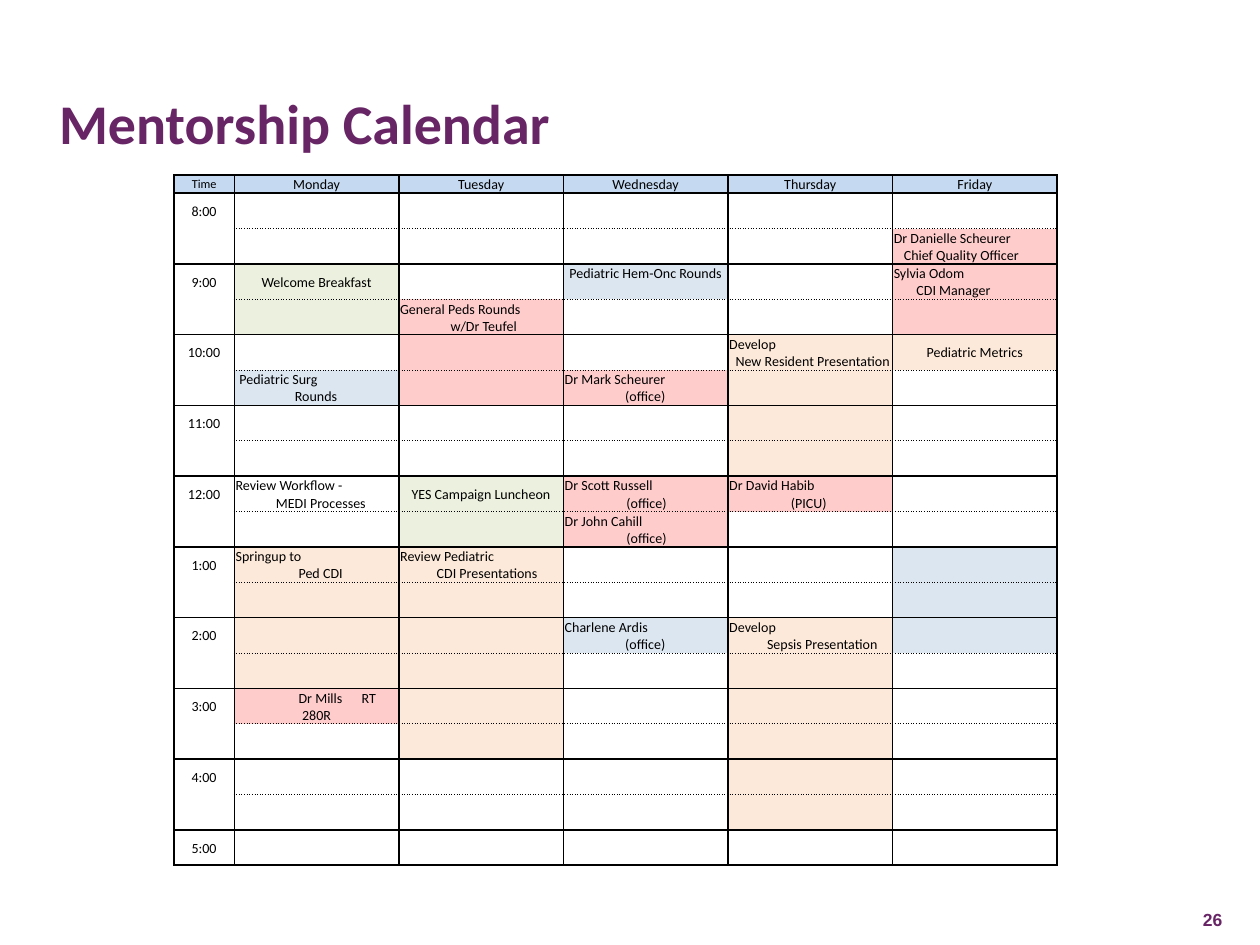
from lxml import etree
from pptx import Presentation, util as u
from pptx.dml.color import RGBColor
from pptx.enum import text as t
from pptx.oxml.ns import qn

INK = {"plum": "682566", "black": "000000", "head": "C5D9F1",
       "g": "EBF1DE", "p": "FFCCCC", "b": "DCE6F1", "o": "FDE9D9"}
LEFT, MID, RIGHT = t.PP_ALIGN.LEFT, t.PP_ALIGN.CENTER, t.PP_ALIGN.RIGHT


def style(par, size, face, ink, bold=False, align=LEFT):
    par.alignment = align
    font = par.font
    font.size, font.name, font.bold = u.Pt(size), face, bold
    font.color.rgb = RGBColor.from_string(INK[ink])


def edge(cell, side, kind):
    """Draw one cell border: solid, dot or none."""
    width = {"solid": u.Pt(1), "dot": u.Pt(0.5), "none": 0}[kind]
    line = etree.SubElement(cell._tc.get_or_add_tcPr(), qn("a:ln" + side), w=str(width))
    if kind == "none":
        etree.SubElement(line, qn("a:noFill"))
        return
    fill = etree.SubElement(line, qn("a:solidFill"))
    etree.SubElement(fill, qn("a:srgbClr"), val=INK["black"])
    etree.SubElement(line, qn("a:prstDash"), val="solid" if kind == "solid" else "sysDot")


prs = Presentation()
prs.slide_width, prs.slide_height = u.Inches(10), u.Inches(7.5)
slide = prs.slides.add_slide(prs.slide_layouts[6])

# Title and page number
for words, box, size, face, align in [
        ("Mentorship Calendar", (0.37, 0.55, 7.81, 0.84), 32, "Calibri", LEFT),
        ("26", (9.25, 7.21, 0.45, 0.17), 10, "Arial", RIGHT)]:
    frame = slide.shapes.add_textbox(*map(u.Inches, box)).text_frame
    frame.word_wrap = True
    frame.vertical_anchor = t.MSO_ANCHOR.MIDDLE
    if align == RIGHT:
        frame.margin_left = frame.margin_right = frame.margin_top = frame.margin_bottom = 0
    frame.text = words
    style(frame.paragraphs[0], size, face, "plum", True, align)

# Fill of each half hour, Monday to Friday
fills = [".....", "....p", "g.b.p", "gp..p", ".p.oo", "bppo.", "...o.",
         "...o.", ".gpp.", ".gp..", "oo..b", "oo..b", "oobob", "oo.o.",
         "po.o.", ".o.o.", "...o.", "...o.", "....."]

# Entries by (row, column): centred text, or lines with their indents
days = ["Time", "Monday", "Tuesday", "Wednesday", "Thursday", "Friday"]
plan = {(0, col): [(day, None)] for col, day in enumerate(days)}
hours = [8, 9, 10, 11, 12, 1, 2, 3, 4, 5]
plan.update({(1 + 2 * i, 0): [(f"{hour}:00", None)] for i, hour in enumerate(hours)})
plan.update({
    (2, 5): [("Dr Danielle Scheurer", 0), ("Chief Quality Officer", 0.08)],
    (3, 1): [("Welcome Breakfast", None)],
    (3, 3): [("Pediatric Hem-Onc Rounds", None)],
    (3, 5): [("Sylvia Odom", 0), ("CDI Manager", 0.18)],
    (4, 2): [("General Peds Rounds", 0), ("w/Dr Teufel", 0.4)],
    (5, 4): [("Develop", 0), ("New Resident Presentation", 0.05)],
    (5, 5): [("Pediatric Metrics", None)],
    (6, 1): [("Pediatric Surg", 0.03), ("Rounds", 0.47)],
    (6, 3): [("Dr Mark Scheurer", 0), ("(office)", 0.48)],
    (9, 1): [("Review Workflow -", 0), ("MEDI Processes", 0.32)],
    (9, 2): [("YES Campaign Luncheon", None)],
    (9, 3): [("Dr Scott Russell", 0), ("(office)", 0.49)],
    (9, 4): [("Dr David Habib", 0), ("(PICU)", 0.49)],
    (10, 3): [("Dr John Cahill", 0), ("(office)", 0.49)],
    (11, 1): [("Springup to", 0), ("Ped CDI", 0.5)],
    (11, 2): [("Review Pediatric", 0), ("CDI Presentations", 0.29)],
    (13, 3): [("Charlene Ardis", 0), ("(office)", 0.48)],
    (13, 4): [("Develop", 0), ("Sepsis Presentation", 0.3)],
    (15, 1): [("\tDr Mills\tRT", 0), ("280R", None)],
})
anchors = {(3, 3): t.MSO_ANCHOR.TOP}

# Calendar grid
rows, cols = len(fills) + 1, len(days)
wide, tall, first, head = map(u.Inches, (7.01, 5.48, 0.48, 0.14))
grid = slide.shapes.add_table(rows, cols, u.Inches(1.38), u.Inches(1.39), wide, tall).table
grid.first_row = grid.horz_banding = False
for col in range(cols):
    grid.columns[col].width = (wide - first) // (cols - 1) if col else first
for row in range(rows):
    grid.rows[row].height = (tall - head) // (rows - 1) if row else head

for row in range(rows):
    for col in range(cols):
        cell = grid.cell(row, col)
        cell.margin_left = cell.margin_right = cell.margin_top = u.Inches(0.01)
        cell.margin_bottom = 0
        cell.vertical_anchor = anchors.get((row, col), t.MSO_ANCHOR.MIDDLE)

        # Borders: a dotted line halfway through each hour, none beside the times
        half = "dot" if col else "none"
        inner = 0 < row < rows - 1
        edge(cell, "L", "solid")
        edge(cell, "R", "solid")
        edge(cell, "T", half if inner and row % 2 == 0 else "solid")
        edge(cell, "B", half if inner and row % 2 else "solid")

        # Fill
        key = "head" if row == 0 else fills[row - 1][col - 1] if col else "."
        if key in INK:
            cell.fill.solid()
            cell.fill.fore_color.rgb = RGBColor.from_string(INK[key])
        else:
            cell.fill.background()

        # Text
        lines = plan.get((row, col), [])
        cell.text_frame.text = "\n".join(words for words, _ in lines)
        if not lines:
            end = etree.SubElement(cell.text_frame.paragraphs[0]._p, qn("a:endParaRPr"))
            end.set("sz", "800")
        for par, (words, indent) in zip(cell.text_frame.paragraphs, lines):
            if indent is not None:
                prop = par._p.get_or_add_pPr()
                prop.set("marL", str(u.Inches(indent)))
                prop.set("indent", "0")
                if "\t" in words:
                    tabs = etree.SubElement(prop, qn("a:tabLst"))
                    for stop in (0.09, 1.07):
                        etree.SubElement(tabs, qn("a:tab"), pos=str(u.Inches(stop)), algn="l")
            size = 7 if (row, col) == (0, 0) else 8
            style(par, size, "Calibri", "black", align=MID if indent is None else LEFT)

prs.save("out.pptx")
